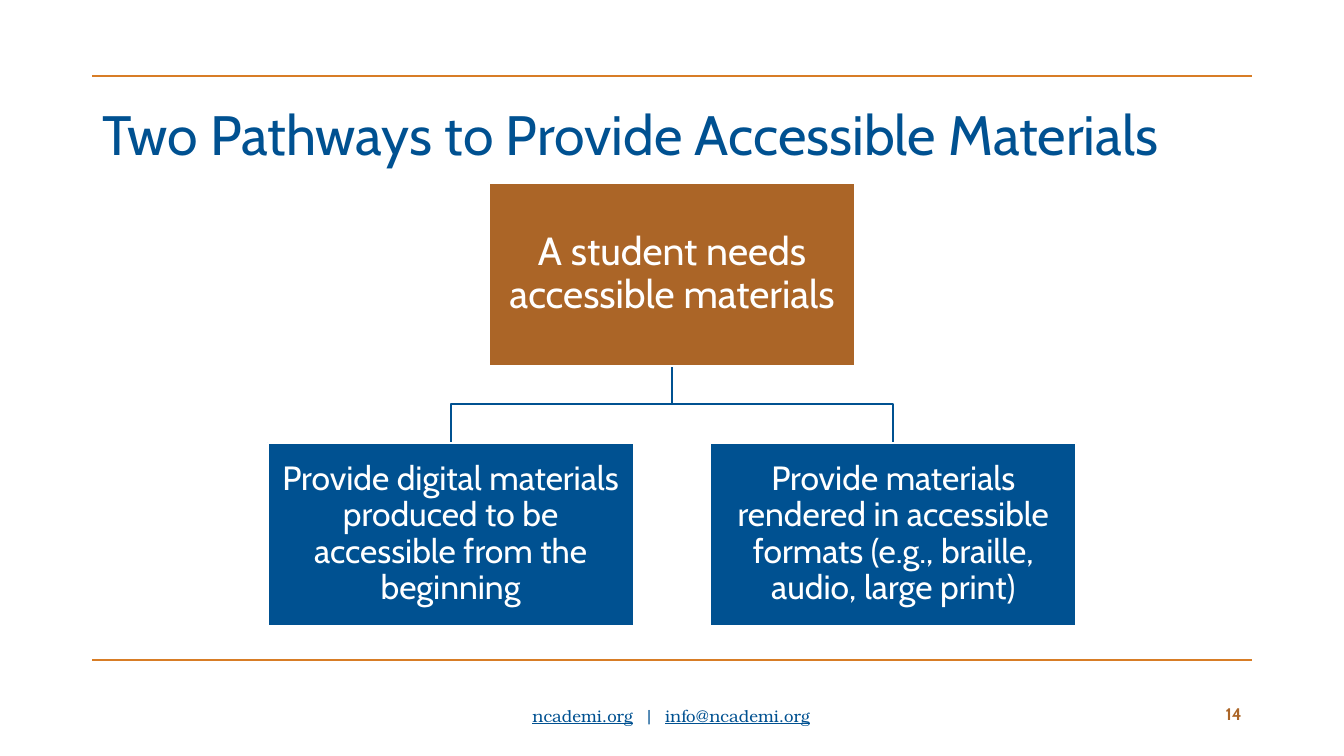
from lxml.etree import SubElement
from pptx import Presentation
from pptx.dml.color import RGBColor
from pptx.enum.shapes import MSO_CONNECTOR, MSO_SHAPE
from pptx.enum.text import MSO_ANCHOR, PP_ALIGN
from pptx.oxml.ns import qn
from pptx.util import Pt

BLUE = RGBColor(0x00, 0x51, 0x91)
BROWN = RGBColor(0xAB, 0x65, 0x27)
ORANGE = RGBColor(0xD8, 0x7D, 0x26)
WHITE = RGBColor(0xFF, 0xFF, 0xFF)

CENTER = 480
BOX_WIDTH, BOX_HEIGHT = 261.4, 130.7
PARENT_TOP, CHILD_TOP = 130.5, 316.2
PARENT_BOTTOM = PARENT_TOP + BOX_HEIGHT
BRANCH_Y = (PARENT_BOTTOM + CHILD_TOP) / 2
CHILD_OFFSET = 158.1


def set_font(paragraph, name, size, color):
    paragraph.font.name = name
    paragraph.font.size = Pt(size)
    paragraph.font.color.rgb = color


def add_text_box(left, top, width, height, anchor, align):
    shape = slide.shapes.add_textbox(Pt(left), Pt(top), Pt(width), Pt(height))
    shape.text_frame.word_wrap = True
    shape.text_frame.vertical_anchor = anchor
    paragraph = shape.text_frame.paragraphs[0]
    paragraph.alignment = align
    return paragraph


presentation = Presentation()
presentation.slide_width, presentation.slide_height = Pt(960), Pt(540)
slide = presentation.slides.add_slide(presentation.slide_layouts[6])

for rule_y in (54.6, 471.5):
    rule = slide.shapes.add_connector(
        MSO_CONNECTOR.STRAIGHT, Pt(66), Pt(rule_y), Pt(894), Pt(rule_y))
    rule.line.color.rgb = ORANGE
    rule.line.width = Pt(1.5)
    SubElement(rule._element.spPr, qn("a:effectLst"))

title = add_text_box(66, 64.8, 828, 66.2, MSO_ANCHOR.MIDDLE, PP_ALIGN.LEFT)
title.text = "Two Pathways to Provide Accessible Materials"
title.line_spacing = 0.9
set_font(title, "Cabin", 39.6, BLUE)

for child_x in (CENTER + CHILD_OFFSET, CENTER - CHILD_OFFSET):
    builder = slide.shapes.build_freeform(Pt(CENTER), Pt(PARENT_BOTTOM))
    builder.add_line_segments(
        [(Pt(CENTER), Pt(BRANCH_Y)), (Pt(child_x), Pt(BRANCH_Y)), (Pt(child_x), Pt(CHILD_TOP))],
        close=False)
    branch = builder.convert_to_shape()
    branch.shadow.inherit = False
    branch.fill.background()
    branch.line.color.rgb = BLUE
    branch.line.width = Pt(1.5)

boxes = [
    (CENTER, PARENT_TOP, BROWN, 28, "A student needs accessible materials"),
    (CENTER - CHILD_OFFSET, CHILD_TOP, BLUE, 24,
     "Provide digital materials produced to be accessible from the beginning"),
    (CENTER + CHILD_OFFSET, CHILD_TOP, BLUE, 24,
     "Provide materials rendered in accessible formats (e.g., braille, audio, large print)"),
]
for box_center, top, color, size, text in boxes:
    box = slide.shapes.add_shape(
        MSO_SHAPE.RECTANGLE, Pt(box_center - BOX_WIDTH / 2), Pt(top), Pt(BOX_WIDTH), Pt(BOX_HEIGHT))
    box.shadow.inherit = False
    box.fill.solid()
    box.fill.fore_color.rgb = color
    box.line.color.rgb = WHITE
    box.line.width = Pt(1.5)
    frame = box.text_frame
    frame.word_wrap = True
    frame.vertical_anchor = MSO_ANCHOR.MIDDLE
    frame.margin_left = frame.margin_right = Pt(1.4)
    frame.margin_top = frame.margin_bottom = Pt(1.4)
    paragraph = frame.paragraphs[0]
    paragraph.text = text
    paragraph.alignment = PP_ALIGN.CENTER
    paragraph.line_spacing = 0.9
    set_font(paragraph, "Cabin", size, WHITE)

contact = add_text_box(262, 500.4, 435, 21.6, MSO_ANCHOR.TOP, PP_ALIGN.CENTER)
for text, underlined, spacing in (
        ("ncademi.org", True, 0), (" ", False, 400), ("|", False, 0),
        (" ", False, 400), ("info@ncademi.org", True, 0)):
    run = contact.add_run()
    run.text = text
    run.font.underline = underlined
    run._r.get_or_add_rPr().set("spc", str(spacing))
set_font(contact, "TeX Gyre Bonum", 12, BLUE)

number = add_text_box(822, 495.4, 72, 28.8, MSO_ANCHOR.MIDDLE, PP_ALIGN.RIGHT)
number.text = "14"
number.font.bold = True
set_font(number, "Cabin", 12, BROWN)

presentation.save("out.pptx")
